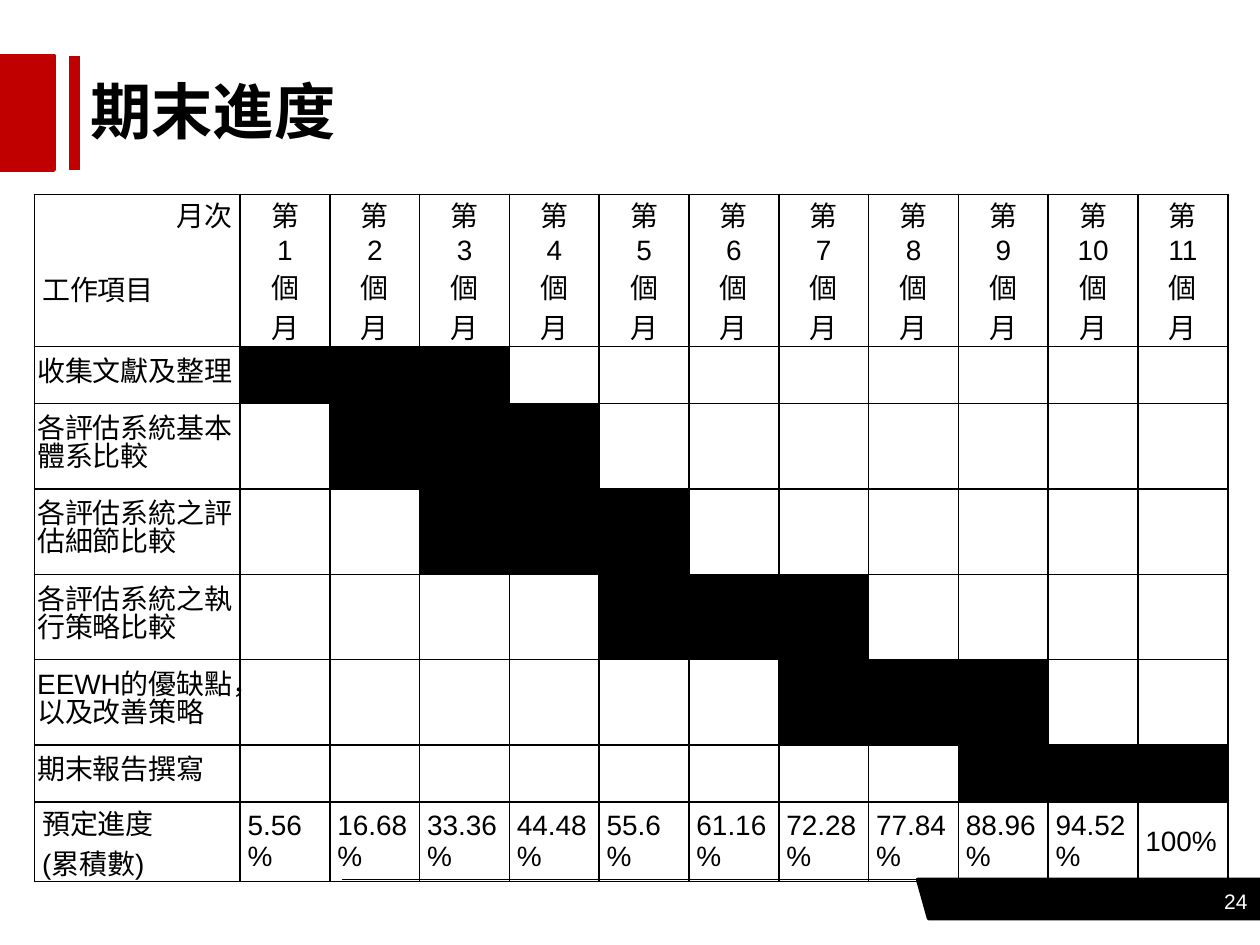
"""Build the final-stage progress slide with its month-by-month work schedule."""
from lxml import etree
from pptx import Presentation
from pptx.dml.color import RGBColor
from pptx.enum.shapes import MSO_CONNECTOR, MSO_SHAPE
from pptx.enum.text import MSO_ANCHOR, PP_ALIGN
from pptx.oxml.ns import qn
from pptx.util import Cm, Pt

STRAIGHT = MSO_CONNECTOR.STRAIGHT
RECTANGLE, PARALLELOGRAM = MSO_SHAPE.RECTANGLE, MSO_SHAPE.PARALLELOGRAM
TOP, MIDDLE = MSO_ANCHOR.TOP, MSO_ANCHOR.MIDDLE
LEFT, CENTER, RIGHT, JUSTIFY = PP_ALIGN.LEFT, PP_ALIGN.CENTER, PP_ALIGN.RIGHT, PP_ALIGN.JUSTIFY

COLORS = {"ink": "000000", "accent": "C00000", "paper": "FFFFFF"}
TITLE = "期末進度"
PAGE_NUMBER = "24"
MONTH_HEADING, TASK_HEADING = "月次", "工作項目"
TASKS = [
    ("收集文獻及整理", 1, 3),
    ("各評估系統基本體系比較", 2, 4),
    ("各評估系統之評估細節比較", 3, 5),
    ("各評估系統之執行策略比較", 5, 7),
    ("EEWH的優缺點，以及改善策略", 7, 9),
    ("期末報告撰寫", 9, 11),
]
TOTAL_LABEL = ["預定進度", "(累積數)"]
TOTALS = ["5.56%", "16.68%", "33.36%", "44.48%", "55.6%", "61.16%",
          "72.28%", "77.84%", "88.96%", "94.52%", "100%"]

TABLE_LEFT, TABLE_TOP = 0.7, 3.92
TASK_WIDTH, MONTH_WIDTH = 4.14, 1.81
ROW_HEIGHTS = [3.07, 1.15, 1.72, 1.72, 1.72, 1.72, 1.15, 1.6]
LABEL_INSET, TEXT_INSET = 0.05, 0.15
LABEL_FORMAT = {"line_spacing": Pt(16)}


def color(name):
    return RGBColor.from_string(COLORS[name])


def write(frame, lines, size, ink="ink", bold=False, **paragraph_format):
    for index, line in enumerate(lines):
        paragraph = frame.paragraphs[0] if index == 0 else frame.add_paragraph()
        for attribute, value in paragraph_format.items():
            setattr(paragraph, attribute, value)
        run = paragraph.add_run()
        run.text = line
        for attribute, value in {"name": "Arial", "size": Pt(size), "bold": bold}.items():
            setattr(run.font, attribute, value)
        run.font.color.rgb = color(ink)


def add_text(slide, box, text, size, **text_format):
    frame = slide.shapes.add_textbox(*map(Cm, box)).text_frame
    frame.word_wrap = True
    frame.vertical_anchor = MIDDLE
    write(frame, [text], size, **text_format)


def add_block(slide, preset, box, fill):
    block = slide.shapes.add_shape(preset, *map(Cm, box))
    block.shadow.inherit = False
    block.fill.solid()
    block.fill.fore_color.rgb = block.line.color.rgb = color(fill)
    block.line.width = Pt(2)
    return block


def add_rule(slide, ends, ink, width):
    rule = slide.shapes.add_connector(STRAIGHT, *map(Cm, ends))
    rule.line.color.rgb = color(ink)
    rule.line.width = Pt(width)
    etree.SubElement(rule._element.spPr, qn("a:effectLst"))


def style_cell(cell, filled):
    properties = cell._tc.get_or_add_tcPr()
    for side in ("a:lnL", "a:lnR", "a:lnT", "a:lnB"):
        border = etree.SubElement(properties, qn(side), w=str(Pt(1)))
        solid = etree.SubElement(border, qn("a:solidFill"))
        etree.SubElement(solid, qn("a:srgbClr"), val=COLORS["ink"])
    if filled:
        cell.fill.solid()
        cell.fill.fore_color.rgb = color("ink")
    else:
        cell.fill.background()


def fill_cell(cell, lines, inset=TEXT_INSET, anchor=MIDDLE, **paragraph_format):
    margins = {"margin_left": Cm(inset), "margin_right": Cm(inset),
               "margin_top": 0, "margin_bottom": 0, "vertical_anchor": anchor}
    for attribute, value in margins.items():
        setattr(cell, attribute, value)
    write(cell.text_frame, lines, 16, **paragraph_format)


def add_schedule(slide):
    months = len(TOTALS)
    schedule = slide.shapes.add_table(
        len(ROW_HEIGHTS), months + 1, Cm(TABLE_LEFT), Cm(TABLE_TOP),
        Cm(TASK_WIDTH + months * MONTH_WIDTH), Cm(sum(ROW_HEIGHTS))).table
    schedule.first_row = schedule.horz_banding = False
    for column, width in zip(schedule.columns, [TASK_WIDTH] + [MONTH_WIDTH] * months):
        column.width = Cm(width)
    for row, height in zip(schedule.rows, ROW_HEIGHTS):
        row.height = Cm(height)

    spans = [(0, -1)] + [(start, end) for _, start, end in TASKS] + [(0, -1)]
    for row, (start, end) in enumerate(spans):
        for month in range(months + 1):
            style_cell(schedule.cell(row, month), start <= month <= end)

    corner = schedule.cell(0, 0)
    fill_cell(corner, [MONTH_HEADING, TASK_HEADING], anchor=TOP, alignment=RIGHT)
    task_heading = corner.text_frame.paragraphs[1]
    task_heading.alignment = LEFT
    task_heading.space_before = Pt(19)

    total_row = len(ROW_HEIGHTS) - 1
    for row, (task, _, _) in enumerate(TASKS, 1):
        fill_cell(schedule.cell(row, 0), [task], LABEL_INSET, **LABEL_FORMAT)
    fill_cell(schedule.cell(total_row, 0), TOTAL_LABEL, alignment=JUSTIFY)
    for month, total in enumerate(TOTALS, 1):
        fill_cell(schedule.cell(0, month), ["第", str(month), "個", "月"], alignment=CENTER)
        fill_cell(schedule.cell(total_row, month), [total], alignment=JUSTIFY)


def main():
    deck = Presentation()
    deck.slide_width, deck.slide_height = Cm(25.4), Cm(19.05)
    slide = deck.slides.add_slide(deck.slide_layouts[6])

    add_rule(slide, (6.9, 17.73, 25.4, 17.73), "ink", 0.75)
    footer = add_block(slide, PARALLELOGRAM, (18.5, 17.73, 7.13, 0.79), "ink")
    footer.adjustments[0] = 0.28
    footer._element.spPr.find(qn("a:xfrm")).set("flipH", "1")
    add_block(slide, RECTANGLE, (0, 1.12, 1.09, 2.31), "accent")
    add_rule(slide, (1.5, 1.12, 1.5, 3.43), "accent", 6)

    add_text(slide, (1.57, 1.12, 22.86, 2.21), TITLE, 35, bold=True)
    add_schedule(slide)
    add_text(slide, (24.16, 17.65, 1.24, 1.02), PAGE_NUMBER, 12, ink="paper", alignment=RIGHT)
    deck.save("out.pptx")


if __name__ == "__main__":
    main()
